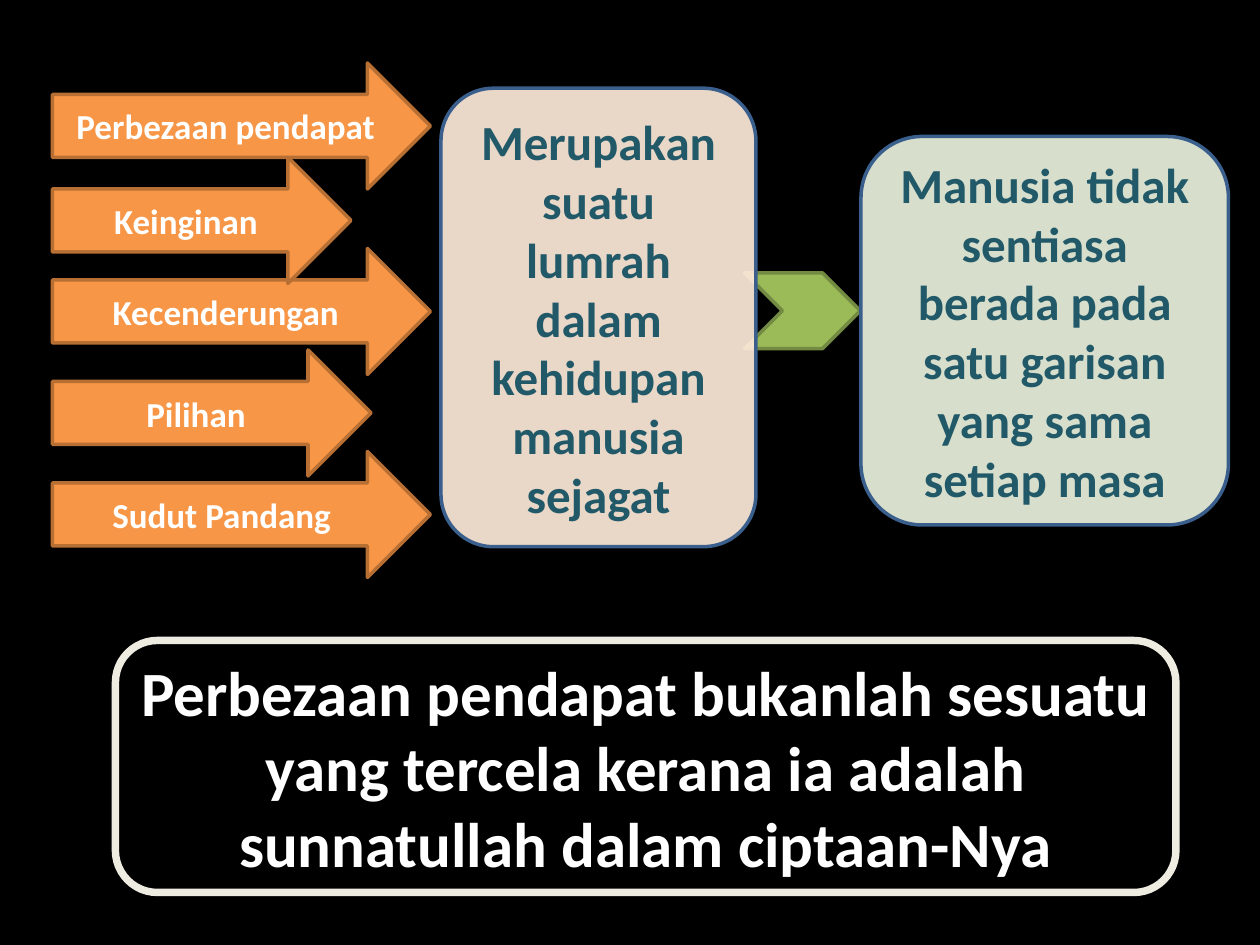
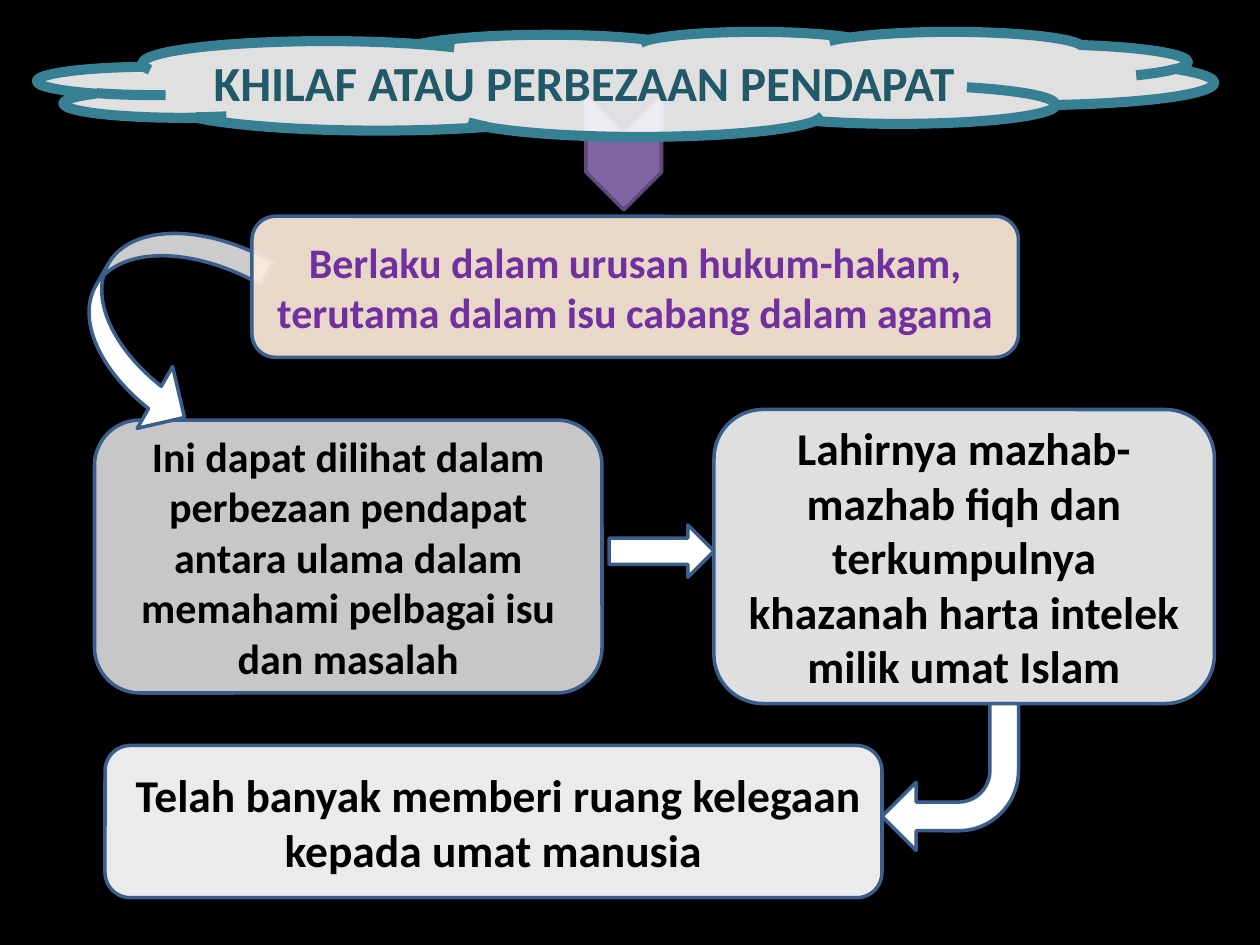
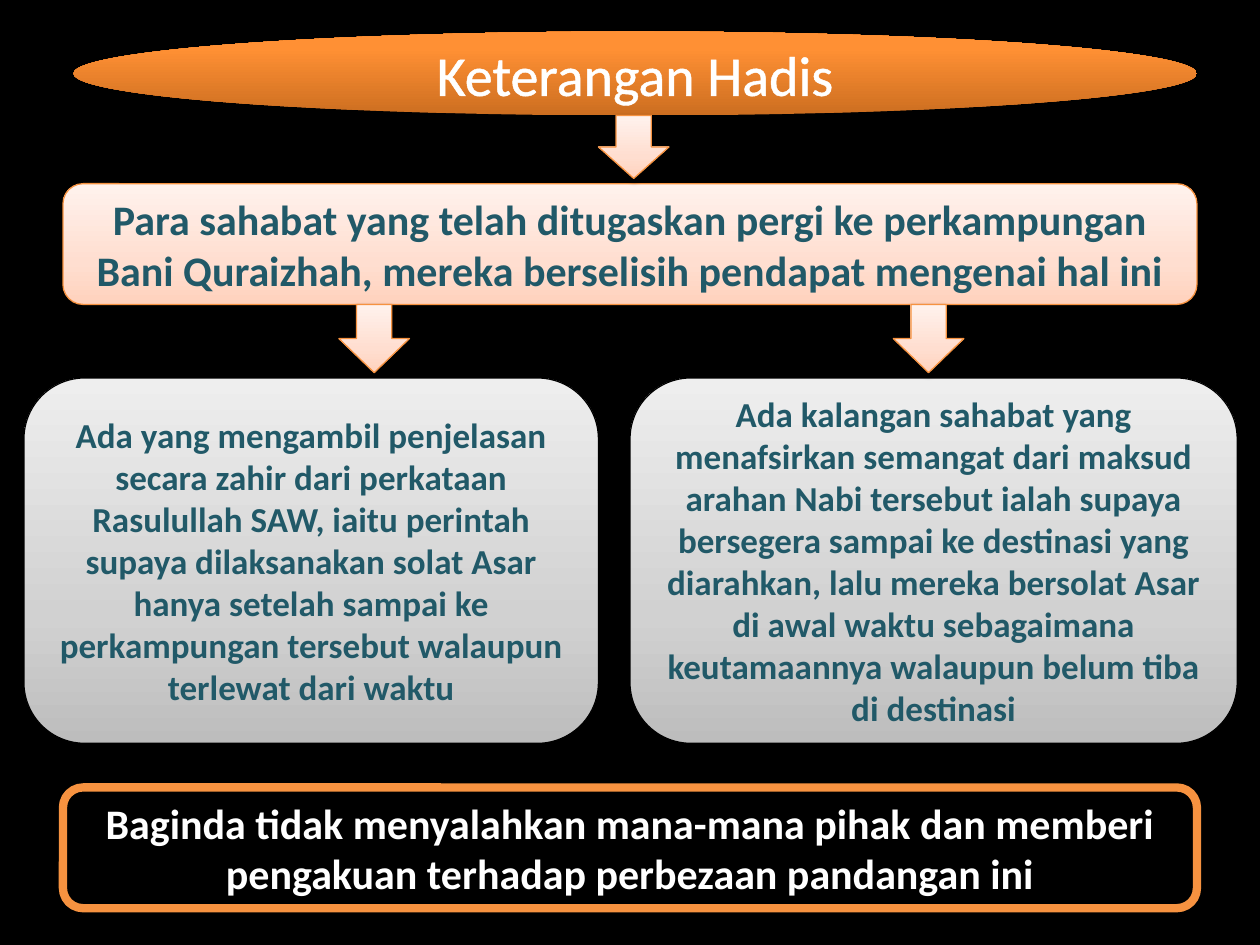
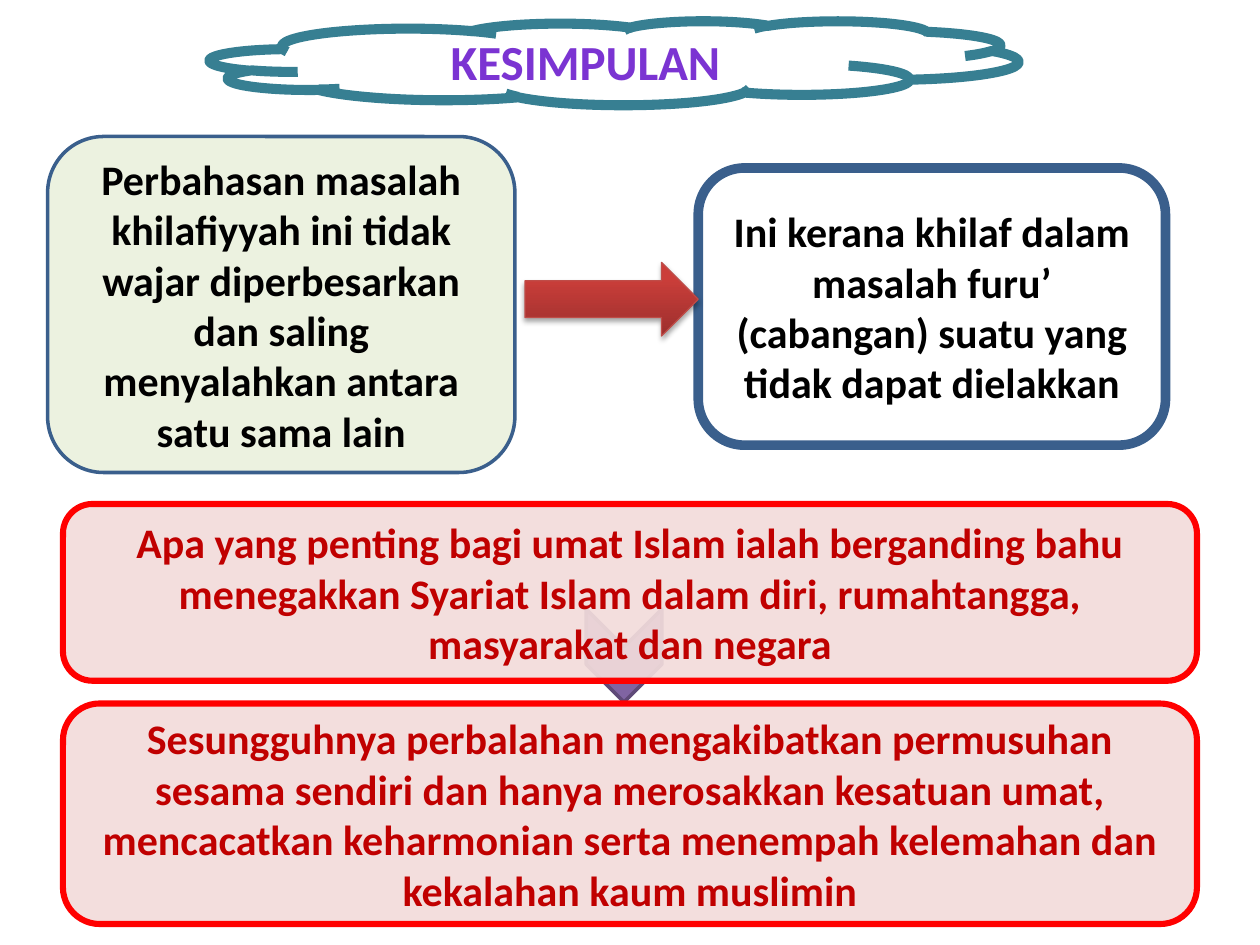
"""Build four slides on differences of opinion in Islam."""
from dataclasses import dataclass
from typing import Any, Optional, Union

from lxml import etree
from pptx import Presentation
from pptx.dml.color import RGBColor
from pptx.enum import shapes, text
from pptx.oxml import ns
from pptx.util import Pt

FONT = "Calibri"
BLACK, WHITE = "000000", "FFFFFF"
TEAL, NAVY, ORANGE = "215968", "3A5F8C", "F69240"
FORM = shapes.MSO_SHAPE


@dataclass(frozen=True)
class Gradient:
    """Colour stops, as (percent, colour), along a counter-clockwise angle."""
    stops: tuple[tuple[int, str], ...]
    angle: int = 90


@dataclass(frozen=True)
class Shadow:
    """A black shadow falling straight down."""
    opacity: int
    distance: float
    blur: float = 3.1


@dataclass(frozen=True)
class Look:
    """Fill, outline and shadow shared by a family of shapes."""
    fill: Union[str, Gradient, None] = None
    line: Optional[str] = None
    width: float = 2
    opacity: int = 100
    shadow: Optional[Shadow] = None


@dataclass(frozen=True)
class Wording:
    """Format of the words in a shape."""
    size: float
    color: Union[str, Gradient] = TEAL
    bold: bool = True
    outline: Optional[tuple[str, float]] = None


@dataclass(frozen=True)
class Item:
    """One shape: its form, look, frame in points and words."""
    form: Any
    look: Look
    frame: tuple[float, float, float, float]
    words: str = ""
    wording: Optional[Wording] = None
    turn: float = 0
    adjustments: tuple[float, ...] = ()


SOFT = Shadow(38, 1.6)
STRONG = Shadow(35, 1.8)
PEACH = Gradient(((0, "FFD2BD"), (35, "FFDED0"), (100, "FFF2ED")))
SILVER = Gradient(((0, "BDBDBD"), (35, "D1D1D1"), (100, "EEEEEE")))
AMBER = Gradient(((0, "CC6E20"), (80, "FF9034"), (100, "FF9136")))
CRIMSON = Gradient(((0, "9C2F2D"), (80, "CB3E3A"), (100, "CE3B37")))
VIOLET = Gradient(((0, "3D1B67"), (43, "7B34D2"), (48, "7330C4"), (100, "3D1B67")), 270)

CAUSE = Look("F79646", "B76F34")
GREEN_STEP = Look("9BBB59", "738A42")
PURPLE_STEP = Look("8064A2", "5F4A78")
WHITE_ARROW = Look(WHITE, NAVY)
CLOUD = Look(WHITE, "377F92", 5.75, 88)
CREAM = Look("FDEADA", NAVY, opacity=92)
LIME = Look("EBF1DE", NAVY, opacity=92)
PEACH_CARD = Look(PEACH, ORANGE, 0.75, shadow=SOFT)
SILVER_CARD = Look(SILVER, BLACK, 0.75, shadow=SOFT)
RED_CARD = Look("F2DCDB", "FF0000", 3.5, 92)

CAUSE_WORDS = Wording(20, WHITE)
TITLE_EDGE = ("5E457C", 0.71)


def grey_card(color: str) -> Look:
    """Return a translucent card with the navy outline."""
    return Look(color, NAVY, opacity=92)


def card(look: Look, frame: tuple, words: str, size: float, color: str = TEAL) -> Item:
    """Return a rounded card with bold words."""
    return Item(FORM.ROUNDED_RECTANGLE, look, frame, words, Wording(size, color))


def cause(top: float, width: float, words: str) -> Item:
    """Return one orange arrow of the causes column."""
    return Item(FORM.RIGHT_ARROW, CAUSE, (30, top, width, 72), words, CAUSE_WORDS)


def down_arrow(left: float, top: float, height: float) -> Item:
    """Return one peach arrow between two rows."""
    return Item(FORM.DOWN_ARROW, PEACH_CARD, (left, top, 40.3, height))


def rgb(color: str) -> RGBColor:
    """Turn a hex string into a colour."""
    return RGBColor.from_string(color)


def add_color(parent: Any, color: str, opacity: int = 100) -> None:
    """Append a colour element to an XML parent."""
    node = etree.SubElement(parent, ns.qn("a:srgbClr"), val=color)
    if opacity < 100:
        etree.SubElement(node, ns.qn("a:alpha"), val=str(opacity * 1000))


def paint(fill: Any, owner: Any, color: Union[str, Gradient, None], opacity: int = 100) -> None:
    """Fill a shape or its words with a colour, a gradient or nothing."""
    if color is None:
        fill.background()
    elif isinstance(color, Gradient):
        fill.gradient()
        fill.gradient_angle = color.angle
        stops = owner.find(ns.qn("a:gradFill")).find(ns.qn("a:gsLst"))
        for stop in list(stops):
            stops.remove(stop)
        for percent, shade in color.stops:
            add_color(etree.SubElement(stops, ns.qn("a:gs"), pos=str(percent * 1000)), shade)
    else:
        fill.solid()
        fill.fore_color.rgb = rgb(color)
        if opacity < 100:
            shade = owner.find(ns.qn("a:solidFill"))[0]
            etree.SubElement(shade, ns.qn("a:alpha"), val=str(opacity * 1000))


def cast(shape: Any, shadow: Optional[Shadow]) -> None:
    """Replace the theme shadow by the given one."""
    shape.shadow.inherit = False
    if shadow:
        effects = shape._element.spPr.find(ns.qn("a:effectLst"))
        outer = etree.SubElement(
            effects, ns.qn("a:outerShdw"), blurRad=str(Pt(shadow.blur)),
            dist=str(Pt(shadow.distance)), dir="5400000", rotWithShape="0")
        add_color(outer, BLACK, shadow.opacity)


def write(frame: Any, words: str, *, size: float, color: Union[str, Gradient],
          bold: bool, outline: Optional[tuple[str, float]]) -> None:
    """Write centred words in a text frame."""
    frame.word_wrap = True
    frame.vertical_anchor = text.MSO_ANCHOR.MIDDLE
    paragraph = frame.paragraphs[0]
    paragraph.alignment = text.PP_ALIGN.CENTER
    run = paragraph.add_run()
    run.text = words
    run.font.name, run.font.size, run.font.bold = FONT, Pt(size), bold
    properties = run._r.get_or_add_rPr()
    paint(run.font.fill, properties, color)
    if outline:
        edge = etree.Element(ns.qn("a:ln"), w=str(Pt(outline[1])))
        add_color(etree.SubElement(edge, ns.qn("a:solidFill")), outline[0])
        properties.insert(0, edge)


def draw(slide: Any, item: Item) -> None:
    """Draw one item on a slide."""
    shape = slide.shapes.add_shape(item.form, *map(Pt, item.frame))
    look = item.look
    shape.rotation = item.turn
    for index, value in enumerate(item.adjustments):
        shape.adjustments[index] = value
    paint(shape.fill, shape._element.spPr, look.fill, look.opacity)
    if look.line:
        shape.line.color.rgb = rgb(look.line)
        shape.line.width = Pt(look.width)
    else:
        shape.line.fill.background()
    cast(shape, look.shadow)
    if item.wording:
        style = item.wording
        write(shape.text_frame, item.words, size=style.size, color=style.color,
              bold=style.bold, outline=style.outline)


OPINIONS = [
    Item(FORM.CHEVRON, GREEN_STEP, (425.5, 156, 66.2, 43.2)),
    card(CREAM, (252, 50.4, 180, 262),
         "Merupakan suatu lumrah dalam kehidupan manusia sejagat", 28),
    cause(36, 216, "Perbezaan pendapat"),
    cause(142, 216, "Kecenderungan"),
    cause(90, 170.6, "Keinginan"),
    cause(200, 182, "Pilihan"),
    cause(258, 216, "Sudut Pandang "),
    card(LIME, (492, 78, 210, 222),
         "Manusia tidak sentiasa berada pada satu garisan yang sama setiap masa", 28),
    card(Look(None, "EEECE1", 4.25), (66, 366, 606, 144),
         "Perbezaan pendapat bukanlah sesuatu yang tercela kerana ia adalah "
         "sunnatullah dalam ciptaan-Nya", 36, WHITE),
]

KHILAF = [
    card(grey_card("D9D9D9"), (54, 240, 290, 156),
         "Ini dapat dilihat dalam perbezaan pendapat antara ulama dalam memahami "
         "pelbagai isu dan masalah", 24, BLACK),
    Item(FORM.CURVED_RIGHT_ARROW, WHITE_ARROW, (49.7, 121.7, 81.4, 122.4),
         turn=29.8, adjustments=(0.18, 0.5, 0.25)),
    Item(FORM.CHEVRON, PURPLE_STEP, (324, 66, 64.8, 43.2), turn=90),
    Item(FORM.CLOUD, CLOUD, (21.6, 18, 672, 60), "KHILAF ATAU PERBEZAAN PENDAPAT ",
         Wording(28, outline=TITLE_EDGE)),
    card(CREAM, (144, 123.6, 438, 80.6),
         "Berlaku dalam urusan hukum-hakam, terutama dalam isu cabang dalam agama",
         24, "7030A0"),
    card(grey_card("F2F2F2"), (408, 234, 286, 168),
         "Lahirnya mazhab-mazhab fiqh dan terkumpulnya khazanah harta intelek milik "
         "umat Islam", 26, BLACK),
    Item(FORM.RIGHT_ARROW, WHITE_ARROW, (348, 300, 60, 30)),
    Item(FORM.BENT_ARROW, WHITE_ARROW, (504, 402, 78, 84),
         turn=180, adjustments=(0.21, 0.25, 0.25, 0.44)),
    card(grey_card(WHITE), (60, 426, 444, 87),
         " Telah banyak memberi ruang kelegaan kepada umat manusia", 26, BLACK),
]

HADIS = [
    card(PEACH_CARD, (36, 105, 648, 69),
         "Para sahabat yang telah ditugaskan pergi ke perkampungan Bani Quraizhah, "
         "mereka berselisih pendapat mengenai hal ini", 24),
    Item(FORM.OVAL, Look(AMBER, shadow=STRONG), (42, 18, 642, 48), "Keterangan Hadis",
         Wording(32, WHITE, False, (WHITE, 1.45))),
    down_arrow(342, 66, 36),
    down_arrow(193.7, 174, 39),
    card(SILVER_CARD, (13.7, 216, 328.3, 208.8),
         "Ada yang mengambil penjelasan secara zahir dari perkataan Rasulullah SAW, "
         "iaitu perintah supaya dilaksanakan solat Asar hanya setelah sampai ke "
         "perkampungan tersebut walaupun terlewat dari waktu", 20),
    card(SILVER_CARD, (360, 216, 347, 208.8),
         "Ada kalangan sahabat yang menafsirkan semangat dari maksud arahan Nabi "
         "tersebut ialah supaya bersegera sampai ke destinasi yang diarahkan, lalu "
         "mereka bersolat Asar di awal waktu sebagaimana keutamaannya walaupun belum "
         "tiba di destinasi", 20),
    down_arrow(510.5, 174, 39),
    card(Look(None, ORANGE, 4.75, shadow=SOFT), (36, 450, 648, 69),
         "Baginda tidak menyalahkan mana-mana pihak dan memberi pengakuan terhadap "
         "perbezaan pandangan ini", 24, WHITE),
]

KESIMPULAN = [
    card(LIME, (27.2, 78, 267, 192),
         "Perbahasan masalah khilafiyyah ini tidak wajar diperbesarkan dan saling "
         "menyalahkan antara satu sama lain", 24, BLACK),
    Item(FORM.CLOUD, CLOUD, (120, 12, 462, 48), "KESIMPULAN",
         Wording(28, VIOLET, outline=TITLE_EDGE)),
    Item(FORM.CHEVRON, PURPLE_STEP, (330, 353, 53.2, 43.2), turn=90),
    card(RED_CARD, (36, 288, 648, 101),
         "Apa yang penting bagi umat Islam ialah berganding bahu menegakkan Syariat "
         "Islam dalam diri, rumahtangga, masyarakat dan negara", 24, "C00000"),
    card(Look(WHITE, NAVY, 5.5), (399, 96, 267, 158.4),
         "Ini kerana khilaf dalam masalah furu’ (cabangan) suatu yang tidak dapat "
         "dielakkan", 24, BLACK),
    Item(FORM.RIGHT_ARROW, Look(CRIMSON, "BF4C48", 0.75, shadow=STRONG),
         (300, 150, 99, 42)),
    card(RED_CARD, (36, 402, 648, 126),
         "Sesungguhnya perbalahan mengakibatkan permusuhan sesama sendiri dan hanya "
         "merosakkan kesatuan umat, mencacatkan keharmonian serta menempah kelemahan "
         "dan kekalahan kaum muslimin", 24, "C00000"),
]


def main() -> None:
    """Build and save the presentation."""
    deck = Presentation()
    deck.slide_width, deck.slide_height = Pt(720), Pt(540)
    for backdrop, items in ((BLACK, OPINIONS), (BLACK, KHILAF),
                            (BLACK, HADIS), (WHITE, KESIMPULAN)):
        slide = deck.slides.add_slide(deck.slide_layouts[6])
        slide.background.fill.solid()
        slide.background.fill.fore_color.rgb = rgb(backdrop)
        for item in items:
            draw(slide, item)
    deck.save("out.pptx")


if __name__ == "__main__":
    main()
